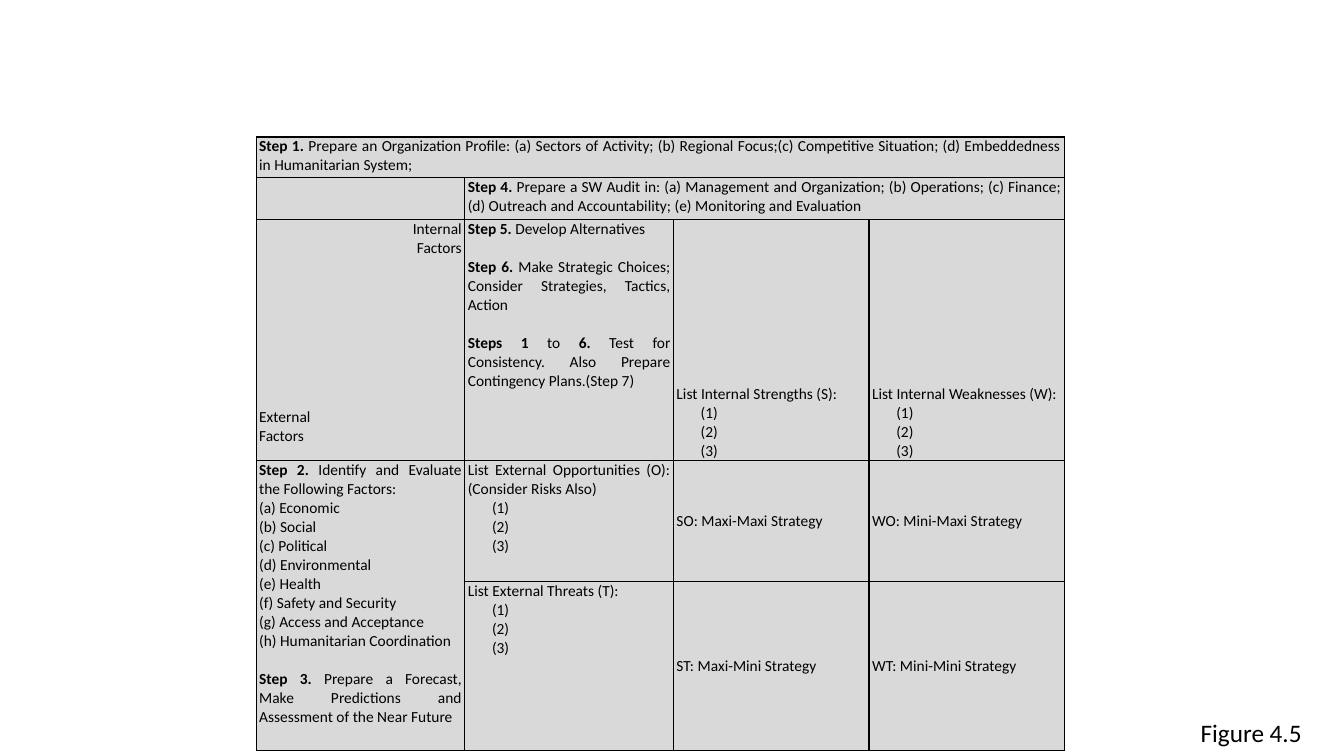
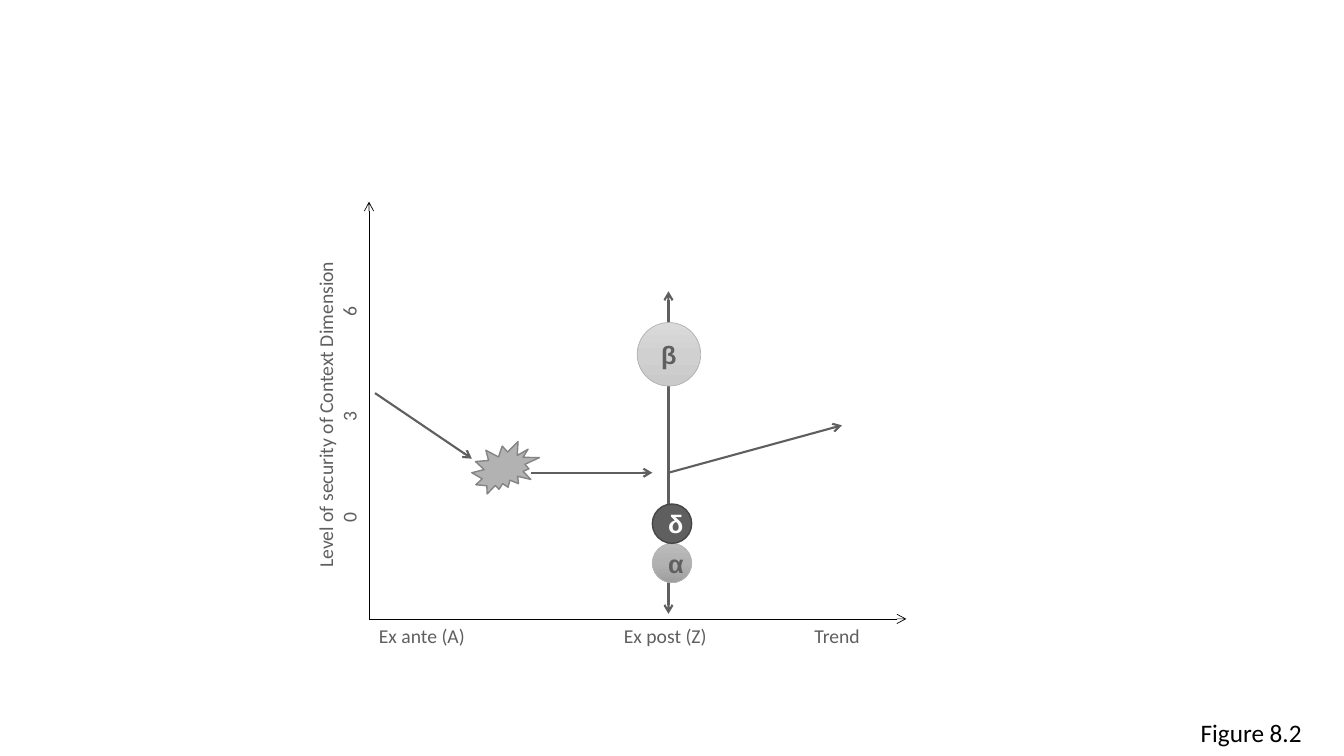
from copy import deepcopy
from dataclasses import dataclass

from lxml.etree import SubElement
from pptx import Presentation
from pptx.dml.color import RGBColor
from pptx.enum.shapes import MSO_CONNECTOR, MSO_SHAPE
from pptx.enum.text import MSO_ANCHOR, MSO_AUTO_SIZE, PP_ALIGN as AL
from pptx.oxml import parse_xml
from pptx.oxml.ns import nsdecls, qn
from pptx.util import Inches, Pt

BLACK, WHITE = "000000", "FFFFFF"
DARK, MID, PANEL = "5F5F5F", "B2B2B2", "D9D9D9"
LINE_PT = 13.43


@dataclass
class Para:
    """A cell paragraph; ** switches bold on and off."""
    text: str
    align: AL = AL.JUSTIFY
    lines_before: int = 0
    indent: float = 0


def rgb(hex_color):
    """Turn a hex string into a colour."""
    return RGBColor.from_string(hex_color)


def set_font(p, size, color, name="Calibri", bold=False):
    """Set the font of a whole paragraph."""
    f = p.font
    f.size, f.name, f.bold = Pt(size), name, bold
    f.color.rgb = rgb(color)


def add_text(s, box, lines, size, color, align=None, tabs=(), vert=None):
    """Add a text box with one paragraph per line."""
    sp = s.shapes.add_textbox(*map(Inches, box))
    tf = sp.text_frame
    tf.word_wrap = True
    tf.auto_size = MSO_AUTO_SIZE.SHAPE_TO_FIT_TEXT
    if vert:
        tf._txBody.bodyPr.set("vert", vert)
    for i, line in enumerate(lines):
        p = tf.add_paragraph() if i else tf.paragraphs[0]
        p.text, p.alignment = line, align
        if tabs:
            tab_list = SubElement(p._p.get_or_add_pPr(), qn("a:tabLst"))
            for pos in tabs:
                SubElement(tab_list, qn("a:tab"), pos=str(Inches(pos)), algn="l")
        set_font(p, size, color)


def add_caption(s, number):
    """Add the figure number in the bottom right corner."""
    add_text(s, (11.81, 7.07, 1.52, 0.4), [f"Figure {number}"], 18, BLACK)


def add_line(s, start, end, color=DARK, width=1.5, head=False):
    """Add an arrow, with a second arrowhead at its start if asked."""
    c = s.shapes.add_connector(MSO_CONNECTOR.STRAIGHT, *map(Inches, start + end))
    c.line.color.rgb, c.line.width = rgb(color), Pt(width)
    ln = c.line._get_or_add_ln()
    for tag in (["a:headEnd"] if head else []) + ["a:tailEnd"]:
        SubElement(ln, qn(tag), type="arrow")
    SubElement(c._element.spPr, qn("a:effectLst"))


def add_shape(s, kind, box, colors, line, width, label="", text_color=DARK):
    """Add a shape with one solid colour or a three-colour gradient."""
    sp = s.shapes.add_shape(kind, *map(Inches, box))
    sp.shadow.inherit = False
    if len(colors) == 1:
        sp.fill.solid()
        sp.fill.fore_color.rgb = rgb(colors[0])
    else:
        sp.fill.gradient()
        sp.fill.gradient_angle = 270
        first = sp.fill.gradient_stops[0]._gs
        first.addnext(deepcopy(first))
        for i, (stop, color) in enumerate(zip(sp.fill.gradient_stops, colors)):
            stop.position, stop.color.rgb = i / 2, rgb(color)
    sp.line.color.rgb, sp.line.width = rgb(line), Pt(width)
    if label:
        p = sp.text_frame.paragraphs[0]
        p.text, p.alignment = label, AL.CENTER
        set_font(p, 18, text_color, "Arial", True)


def style_cell(cell):
    """Give a cell its fill, margins and borders."""
    cell.fill.solid()
    cell.fill.fore_color.rgb = rgb(PANEL)
    cell.margin_left = cell.margin_right = Inches(0.03)
    cell.margin_top = cell.margin_bottom = 0
    for i, side in enumerate("LRTB"):
        cell._tc.get_or_add_tcPr().insert(i, parse_xml(
            f'<a:ln{side} {nsdecls("a")} w="12700"><a:solidFill>'
            f'<a:srgbClr val="{BLACK}"/></a:solidFill></a:ln{side}>'))


def fill_cell(cell, paras, anchor=MSO_ANCHOR.TOP):
    """Write paragraphs into a cell."""
    cell.vertical_anchor = anchor
    tf = cell.text_frame
    for i, para in enumerate(paras):
        p = tf.add_paragraph() if i else tf.paragraphs[0]
        p.alignment = para.align
        if para.lines_before:
            p.space_before = Pt(para.lines_before * LINE_PT)
        if para.indent:
            p._p.get_or_add_pPr().set("marL", str(Inches(para.indent)))
        set_font(p, 11, BLACK)
        for j, part in enumerate(para.text.split("**")):
            if part:
                r = p.add_run()
                r.text, r.font.bold = part, j % 2 == 1


def numbered(title):
    """Return a title followed by three open numbered entries."""
    return [Para(title)] + [Para(f"({n})", indent=0.24) for n in (1, 2, 3)]


def add_matrix(s):
    """Add the strategy matrix table."""
    cols, rows = (2.07, 2.07, 1.94, 1.94), (0.4, 0.42, 2.39, 1.2, 1.68)
    frame = s.shapes.add_table(len(rows), len(cols), Inches(2.54), Inches(1.36),
                               Inches(sum(cols)), Inches(sum(rows)))
    t = frame.table
    t.first_row = t.horz_banding = False
    for col, width in zip(t.columns, cols):
        col.width = Inches(width)
    for row, height in zip(t.rows, rows):
        row.height = Inches(height)
    for cell in t.iter_cells():
        style_cell(cell)
    for start, end in (((0, 0), (0, 3)), ((1, 1), (1, 3)), ((3, 0), (4, 0))):
        t.cell(*start).merge(t.cell(*end))

    factors = ("Economic", "Social", "Political", "Environmental", "Health",
               "Safety and Security", "Access and Acceptance",
               "Humanitarian Coordination")
    top_cells = {
        (0, 0): [Para("**Step 1. **Prepare an Organization Profile: (a) Sectors of "
                      "Activity; (b) Regional Focus;(c) Competitive Situation; "
                      "(d) Embeddedness in Humanitarian System;")],
        (1, 1): [Para("**Step 4. **Prepare a SW Audit in: (a) Management and "
                      "Organization; (b) Operations; (c) Finance; (d) Outreach and "
                      "Accountability; (e) Monitoring and Evaluation")],
        (2, 0): [Para("Internal", AL.RIGHT), Para("Factors", AL.RIGHT),
                 Para("External", lines_before=8), Para("Factors")],
        (2, 1): [Para("**Step 5. **Develop Alternatives"),
                 Para("**Step 6. **Make Strategic Choices; Consider Strategies, "
                      "Tactics, Action", lines_before=1),
                 Para("**Steps 1 **to **6. **Test for Consistency. Also Prepare "
                      "Contingency Plans.(Step 7)", lines_before=1)],
        (3, 0): [Para("**Step 2. **Identify and Evaluate the Following Factors:"),
                 *(Para(f"({k}) {name}") for k, name in zip("abcdefgh", factors)),
                 Para("**Step 3. **Prepare a Forecast, Make Predictions and "
                      "Assessment of the Near Future", lines_before=1)],
        (3, 1): numbered("List External Opportunities (O):(Consider Risks Also)"),
        (4, 1): numbered("List External Threats (T):"),
    }
    for pos, paras in top_cells.items():
        fill_cell(t.cell(*pos), paras)
    for col, name in ((2, "Strengths (S)"), (3, "Weaknesses (W)")):
        fill_cell(t.cell(2, col), numbered(f"List Internal {name}:"),
                  MSO_ANCHOR.BOTTOM)
    strategies = (("SO: Maxi-Maxi", "WO: Mini-Maxi"),
                  ("ST: Maxi-Mini", "WT: Mini-Mini"))
    for row, names in enumerate(strategies, 3):
        for col, name in enumerate(names, 2):
            fill_cell(t.cell(row, col), [Para(f"{name} Strategy")],
                      MSO_ANCHOR.MIDDLE)


def add_security_diagram(s):
    """Add the diagram of security level before and after an event."""
    axis_x, axis_y, post_x, level_y = 3.66, 6.14, 6.63, 4.69
    add_text(s, (axis_x, axis_y, 5.2, 0.34), ["Ex ante (A)\tEx post (Z)\tTrend"],
             14, DARK, tabs=(2.43, 4.32))
    add_text(s, (3.06, 1.85, 0.67, 4.53),
             ["Level of security of Context Dimension", "0\t\t3\t\t 6"],
             14, DARK, AL.CENTER, vert="vert270")
    add_line(s, (post_x, 2.89), (post_x, 6.09), head=True)
    oval = MSO_SHAPE.OVAL
    add_shape(s, oval, (6.47, 5.39, 0.39, 0.39), ("BBBBBB", MID, "9E9E9E"),
              MID, 0.5, "α")
    add_shape(s, oval, (6.32, 3.2, 0.63, 0.63), ("DADADA", "D0D0D0", "CACACA"),
              MID, 0.5, "β")
    add_shape(s, MSO_SHAPE.EXPLOSION2, (4.68, 4.38, 0.67, 0.52), (MID,), "848484", 1)
    add_shape(s, oval, (6.47, 5, 0.39, 0.39), (DARK,), "464646", 1, "δ", WHITE)
    for start, end in (((post_x, level_y), (8.35, 4.22)),
                       ((3.72, 3.9), (4.68, 4.55)),
                       ((5.27, level_y), (6.47, level_y))):
        add_line(s, start, end)
    for end in ((axis_x, 2), (8.99, axis_y)):
        add_line(s, (axis_x, axis_y), end, BLACK, 0.5)


def main():
    """Build and save the presentation."""
    prs = Presentation()
    prs.slide_width, prs.slide_height = Inches(13.33), Inches(7.5)
    for number, draw in (("4.5", add_matrix), ("8.2", add_security_diagram)):
        s = prs.slides.add_slide(prs.slide_layouts[6])
        draw(s)
        add_caption(s, number)
    prs.save("out.pptx")


if __name__ == "__main__":
    main()
